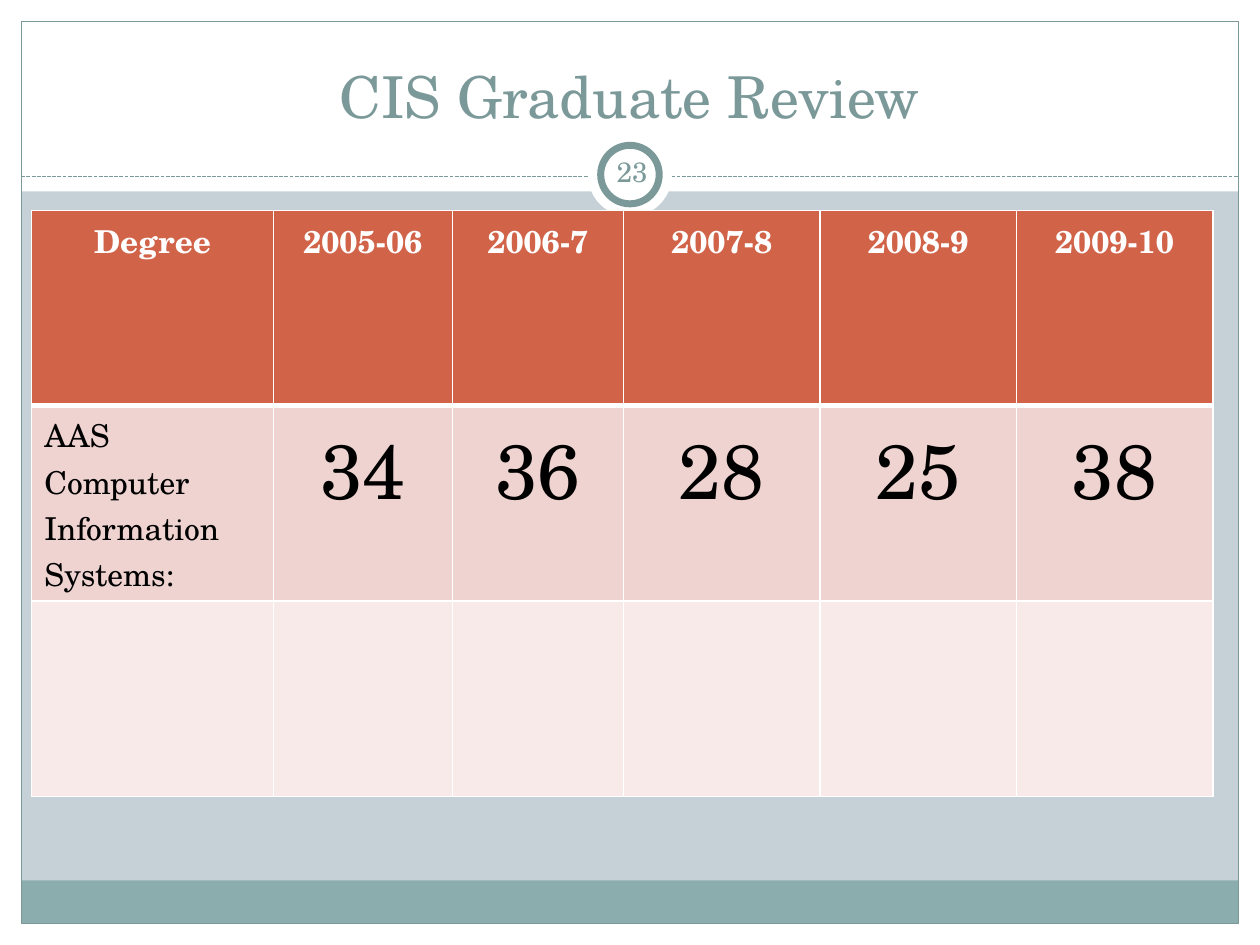
import pptx
import pptx.dml.color
import pptx.enum.dml
import pptx.enum.shapes
import pptx.enum.text
import pptx.oxml
import pptx.oxml.ns
import pptx.util
from pptx.util import Cm

RGBColor = pptx.dml.color.RGBColor
Align = pptx.enum.text.PP_ALIGN
Anchor = pptx.enum.text.MSO_ANCHOR
Shape = pptx.enum.shapes.MSO_SHAPE

FONT = "TeX Gyre Schola"
WHITE = RGBColor(0xFF, 0xFF, 0xFF)
BLACK = RGBColor(0, 0, 0)
BACKDROP = RGBColor(0xC5, 0xD1, 0xD7)
TEAL = RGBColor(0x7C, 0x99, 0x9A)
FOOTER_TEAL = RGBColor(0x8C, 0xAD, 0xAE)
HEADER_RED = RGBColor(0xD1, 0x63, 0x49)
ROW_FILLS = [HEADER_RED, RGBColor(0xEE, 0xD3, 0xD0), RGBColor(0xF7, 0xEA, 0xE9)]

WIDTH, HEIGHT, MARGIN = 25.4, 19.05, 0.43
COLUMN_WIDTHS = [4.87, 3.61, 3.45, 3.96, 3.96, 3.96]
ROW_HEIGHT = 3.94
ROWS = [
    ["Degree", "2005-06", "2006-7", "2007-8", "2008-9", "2009-10"],
    ["AAS Computer Information Systems:", "34", "36", "28", "25", "38"],
    [""] * 6,
]


def add_block(page, kind, box, fill=None, line=None, weight=0.75):
    """Add a preset shape with an optional fill and outline."""
    shape = page.shapes.add_shape(kind, *map(Cm, box))
    shape.shadow.inherit = False
    if fill is None:
        shape.fill.background()
    else:
        shape.fill.solid()
        shape.fill.fore_color.rgb = fill
    if line is None:
        shape.line.fill.background()
    else:
        shape.line.color.rgb = line
        shape.line.width = pptx.util.Pt(weight)


def style_paragraph(para, size, color, align=Align.CENTER, bold=False):
    """Set the alignment and font of a paragraph."""
    para.alignment = align
    para.font.name = FONT
    para.font.size = pptx.util.Pt(size)
    para.font.color.rgb = color
    para.font.bold = bold


def add_frame(page, box):
    """Draw the white margins, footer band, outline and dashed rule."""
    left, top, width, height = box
    inner = width - 2 * MARGIN
    bottom = top + height - MARGIN
    for edge in (
        (left, bottom, width, MARGIN),
        (left, top, width, 3.86),
        (left, top, MARGIN, height),
        (left + width - MARGIN, top, MARGIN, height),
    ):
        add_block(page, Shape.RECTANGLE, edge, WHITE)
    add_block(page, Shape.RECTANGLE, (left + MARGIN, bottom - 0.87, inner, 0.87), FOOTER_TEAL)
    add_block(page, Shape.RECTANGLE,
              (left + MARGIN, top + MARGIN, inner, height - 2 * MARGIN), line=TEAL)
    rule_top = Cm(top + 3.56)
    rule = page.shapes.add_connector(
        pptx.enum.shapes.MSO_CONNECTOR.STRAIGHT,
        Cm(left + MARGIN), rule_top, Cm(left + width - MARGIN), rule_top)
    rule.line.color.rgb = TEAL
    rule.line.width = pptx.util.Pt(0.75)
    rule.line.dash_style = pptx.enum.dml.MSO_LINE.SQUARE_DOT
    pptx.oxml.ns.qn("a:effectLst")
    rule.element.spPr.append(pptx.oxml.parse_xml(
        f'<a:effectLst {pptx.oxml.ns.nsdecls("a")}/>'))


def add_number_badge(page, box, number):
    """Draw the ringed slide number inside a square box."""
    left, top, size, _ = box
    inset = 0.26
    ring = size - 2 * inset
    add_block(page, Shape.OVAL, box, WHITE)
    add_block(page, Shape.OVAL, (left + inset, top + inset, ring, ring), WHITE, TEAL, 4)
    label = page.shapes.add_textbox(Cm(left + inset), Cm(top + 0.18), Cm(1.27), Cm(1.22))
    frame = label.text_frame
    frame.word_wrap = True
    frame.vertical_anchor = Anchor.MIDDLE
    frame.margin_left = frame.margin_right = Cm(0.13)
    frame.margin_top = frame.margin_bottom = Cm(0.13)
    frame.text = number
    style_paragraph(frame.paragraphs[0], 16, TEAL)


def place_title(page, box, text):
    """Fill the title placeholder and bring it to the front."""
    title = page.shapes.title
    title.left, title.top, title.width, title.height = map(Cm, box)
    frame = title.text_frame
    frame.text = text
    frame.word_wrap = True
    frame.auto_size = pptx.enum.text.MSO_AUTO_SIZE.NONE
    frame.vertical_anchor = Anchor.BOTTOM
    style_paragraph(frame.paragraphs[0], 33, TEAL)
    title.element.getparent().append(title.element)


def set_borders(cell, weights):
    """Give a cell white borders of the given weights by side."""
    properties = cell._tc.get_or_add_tcPr()
    for side, weight in weights.items():
        properties.append(pptx.oxml.parse_xml(
            f'<a:ln{side} {pptx.oxml.ns.nsdecls("a")} w="{pptx.util.Pt(weight)}">'
            f'<a:solidFill><a:srgbClr val="{WHITE}"/></a:solidFill></a:ln{side}>'))


def add_graduate_table(page, box):
    """Add the table of graduates by degree and year."""
    table = page.shapes.add_table(len(ROWS), len(COLUMN_WIDTHS), *map(Cm, box)).table
    for column, width in zip(table.columns, COLUMN_WIDTHS):
        column.width = Cm(width)
    for r, values in enumerate(ROWS):
        table.rows[r].height = Cm(ROW_HEIGHT)
        for c, value in enumerate(values):
            cell = table.cell(r, c)
            set_borders(cell, {"L": 1, "R": 1, "T": 3 if r == 1 else 1, "B": 3 if r == 0 else 1})
            cell.fill.solid()
            cell.fill.fore_color.rgb = ROW_FILLS[r]
            cell.text = value
            para = cell.text_frame.paragraphs[0]
            if r == 0:
                style_paragraph(para, 18, WHITE, bold=True)
            elif c == 0:
                style_paragraph(para, 18, BLACK, Align.LEFT)
            else:
                style_paragraph(para, 44, BLACK)


def main():
    """Build and save the graduate review slide."""
    deck = pptx.Presentation()
    deck.slide_width, deck.slide_height = Cm(WIDTH), Cm(HEIGHT)
    page = deck.slides.add_slide(deck.slide_layouts[5])
    page.background.fill.solid()
    page.background.fill.fore_color.rgb = BACKDROP
    add_frame(page, (0, 0, WIDTH, HEIGHT))
    place_title(page, (0.85, 0.64, 23.7, 2.11), "CIS Graduate Review")
    add_number_badge(page, (11.85, 2.67, 1.7, 1.7), "23")
    add_graduate_table(page, (0.64, 4.24, sum(COLUMN_WIDTHS), ROW_HEIGHT * len(ROWS)))
    deck.save("out.pptx")


if __name__ == "__main__":
    main()
